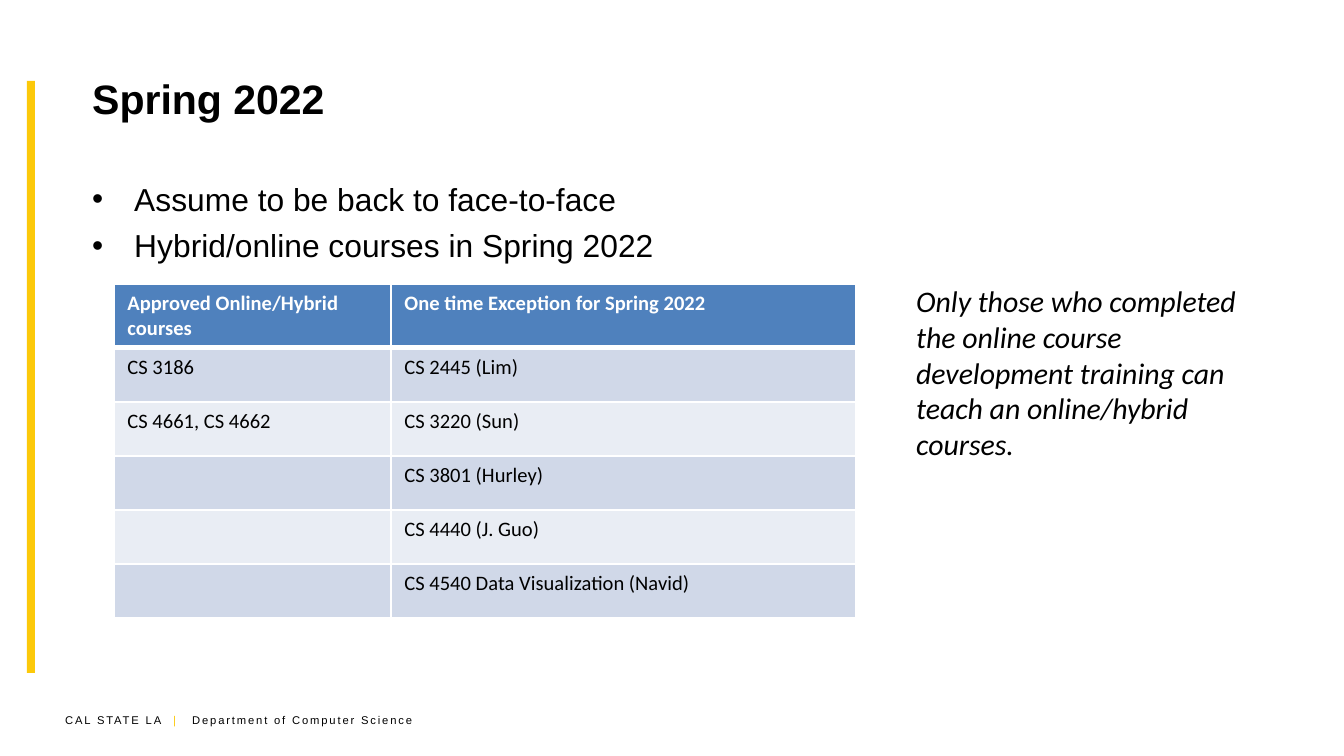
"""Build the Spring 2022 course modality slide."""
from dataclasses import dataclass

from lxml import etree
from pptx import Presentation
from pptx.dml.color import RGBColor
from pptx.enum.shapes import MSO_SHAPE
from pptx.enum.text import MSO_ANCHOR
from pptx.oxml.ns import qn
from pptx.util import Emu, Pt

RECT = MSO_SHAPE.RECTANGLE
TOP, MIDDLE = MSO_ANCHOR.TOP, MSO_ANCHOR.MIDDLE
PX_PER_INCH = 134.4
COLORS = {"black": "000000", "white": "FFFFFF", "gold": "FCC90A",
          "header": "4F81BD", "odd": "D0D8E8", "even": "E9EDF4"}
COURSES = [
    ("Approved Online/Hybrid courses", "One time Exception for Spring 2022"),
    ("CS 3186", "CS 2445 (Lim)"),
    ("CS 4661, CS 4662", "CS 3220 (Sun)"),
    ("", "CS 3801 (Hurley)"),
    ("", "CS 4440 (J. Guo)"),
    ("", "CS 4540 Data Visualization (Navid)"),
]
COLUMN_WIDTHS = (277, 465)
HEADER_HEIGHT, ROW_HEIGHT = 64, 54


@dataclass(frozen=True)
class Style:
    size: float
    font: str = "Arial"
    color: str = "black"
    bold: bool = False
    italic: bool = False


@dataclass(frozen=True)
class TextBox:
    box: tuple[int, int, int, int]
    lines: tuple[str, ...]
    style: Style
    anchor: MSO_ANCHOR = TOP
    bullets: bool = False


TEXT_BOXES = [
    TextBox((79, 35, 1196, 126), ("Spring 2022",), Style(22, bold=True), MIDDLE),
    TextBox((79, 173, 1196, 499),
            ("Assume to be back to face-to-face",
             "Hybrid/online courses in Spring 2022"),
            Style(17), bullets=True),
    TextBox((903, 276, 360, 195),
            ("Only those who completed the online course development training "
             "can teach an online/hybrid courses.",),
            Style(16, "Calibri", italic=True)),
]


def px(n: int) -> Emu:
    """Turn pixels into EMU."""
    return Emu(round(n * 914400 / PX_PER_INCH))


def rgb(name: str) -> RGBColor:
    """Look up a named colour."""
    return RGBColor.from_string(COLORS[name])


def format_run(r, style: Style) -> None:
    """Apply a style to a run."""
    r.font.size, r.font.name = Pt(style.size), style.font
    r.font.bold, r.font.italic = style.bold, style.italic
    r.font.color.rgb = rgb(style.color)


def add_bullet(p) -> None:
    """Give a paragraph a hanging bullet."""
    pPr = p._p.get_or_add_pPr()
    pPr.set("marL", str(px(42)))
    pPr.set("indent", str(-px(42)))
    etree.SubElement(pPr, qn("a:buFont"), typeface="Arial")
    etree.SubElement(pPr, qn("a:buChar"), char="•")


def add_text_frame(s, box: tuple[int, int, int, int]):
    """Add a wrapping text box and return its frame."""
    tf = s.shapes.add_textbox(*map(px, box)).text_frame
    tf.word_wrap = True
    return tf


def draw_text(s, item: TextBox) -> None:
    """Draw a text box in one style."""
    tf = add_text_frame(s, item.box)
    tf.vertical_anchor = item.anchor
    tf.text = "\n".join(item.lines)
    for i, p in enumerate(tf.paragraphs):
        if item.bullets:
            add_bullet(p)
        if i:
            p.space_before = Pt(4.5)
        for r in p.runs:
            format_run(r, item.style)


def draw_footer(s) -> None:
    """Draw the letter-spaced footer on tab stops."""
    p = add_text_frame(s, (52, 707, 392, 27)).paragraphs[0]
    tabs = etree.SubElement(p._p.get_or_add_pPr(), qn("a:tabLst"))
    for stop in (108, 127):
        etree.SubElement(tabs, qn("a:tab"), pos=str(px(stop)), algn="l")
    for text, color in (("CAL STATE LA\t", "black"), ("|\t", "gold"),
                        ("Department of Computer Science", "black")):
        r = p.add_run()
        r.text = text
        format_run(r, Style(6, color=color))
        r._r.get_or_add_rPr().set("spc", "100")


def draw_bar(s) -> None:
    """Draw the gold bar at the left edge."""
    sp = s.shapes.add_shape(RECT, px(27), px(81), px(8), px(592))
    sp.shadow.inherit = False
    sp.fill.solid()
    sp.fill.fore_color.rgb = rgb("gold")
    sp.line.fill.background()


def set_borders(cell, top: int, bottom: int) -> None:
    """Give a cell white borders with widths in points."""
    tcPr = cell._tc.get_or_add_tcPr()
    widths = {"a:lnL": 1, "a:lnR": 1, "a:lnT": top, "a:lnB": bottom}
    for i, (tag, width) in enumerate(widths.items()):
        ln = etree.Element(qn(tag), w=str(Pt(width)))
        fill = etree.SubElement(ln, qn("a:solidFill"))
        etree.SubElement(fill, qn("a:srgbClr"), val=COLORS["white"])
        tcPr.insert(i, ln)


def draw_table(s) -> None:
    """Draw the banded course table."""
    height = HEADER_HEIGHT + ROW_HEIGHT * (len(COURSES) - 1)
    table = s.shapes.add_table(len(COURSES), len(COLUMN_WIDTHS), px(114), px(284),
                               px(sum(COLUMN_WIDTHS)), px(height)).table
    for column, width in zip(table.columns, COLUMN_WIDTHS):
        column.width = px(width)
    for i, texts in enumerate(COURSES):
        header = i == 0
        table.rows[i].height = px(HEADER_HEIGHT if header else ROW_HEIGHT)
        band = "header" if header else ("even", "odd")[i % 2]
        style = Style(11, "Calibri", "white" if header else "black", header)
        for j, text in enumerate(texts):
            cell = table.cell(i, j)
            cell.fill.solid()
            cell.fill.fore_color.rgb = rgb(band)
            set_borders(cell, 3 if i == 1 else 1, 3 if header else 1)
            if text:
                cell.text_frame.text = text
                format_run(cell.text_frame.paragraphs[0].runs[0], style)


def main() -> None:
    """Create and save the presentation."""
    prs = Presentation()
    prs.slide_width, prs.slide_height = px(1344), px(756)
    s = prs.slides.add_slide(prs.slide_layouts[6])
    draw_footer(s)
    draw_bar(s)
    for item in TEXT_BOXES:
        draw_text(s, item)
    draw_table(s)
    prs.save("out.pptx")


if __name__ == "__main__":
    main()
